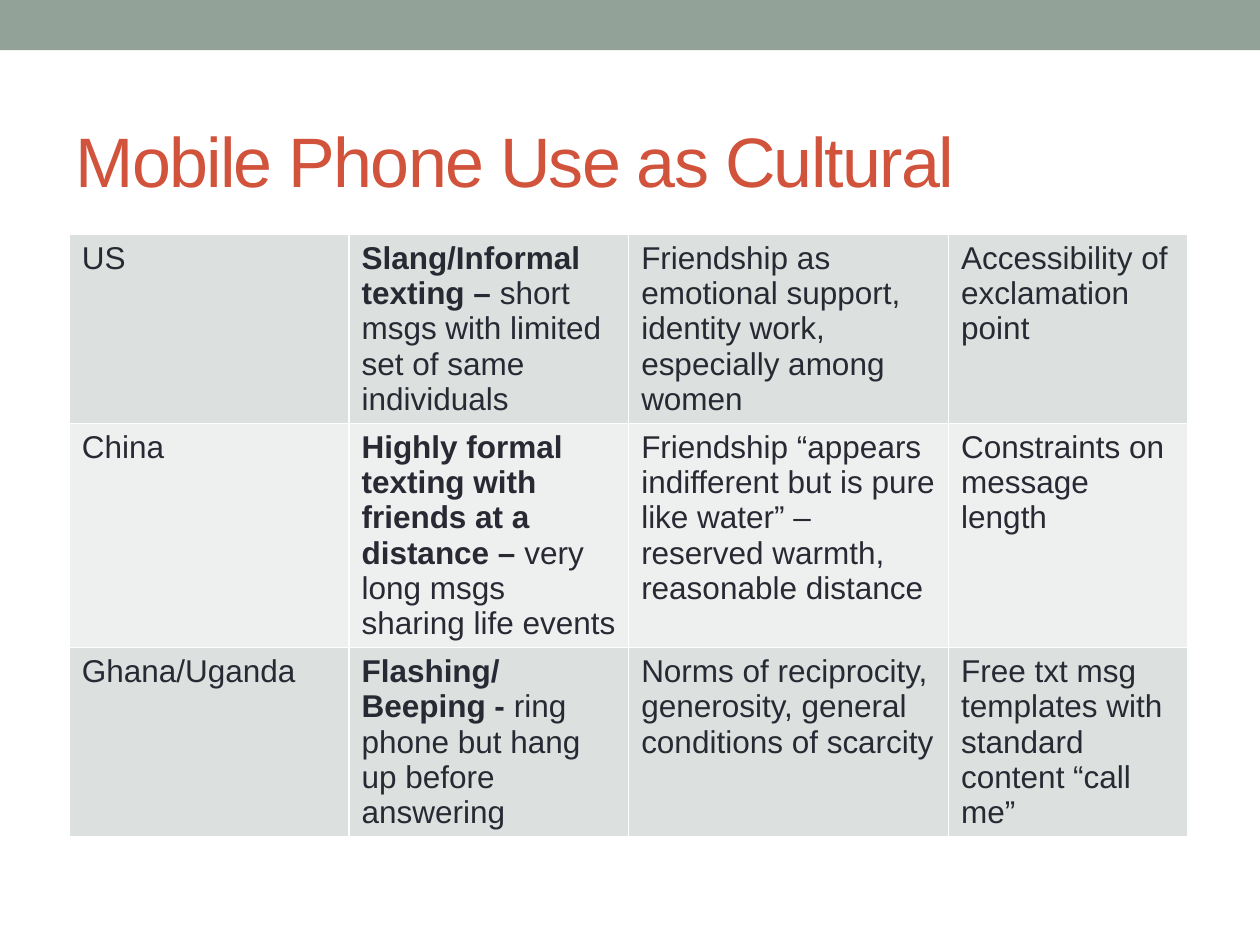
import dataclasses

import pptx
import pptx.dml.color
import pptx.enum.shapes
import pptx.enum.text
import pptx.oxml
import pptx.oxml.ns
import pptx.util


@dataclasses.dataclass(frozen=True)
class Theme:
    font: str = "Arial"
    title_size: int = 40
    body_size: int = 18
    title: str = "D2533C"
    text: str = "292934"
    banner: str = "93A299"
    bands: tuple = ("DCE0DE", "EEF0EF")
    border: str = "FFFFFF"


THEME = Theme()
SLIDE_WIDTH = pptx.util.Inches(10)
SLIDE_HEIGHT = pptx.util.Inches(7.5)

TITLE = "Mobile Phone Use as Cultural"
# Each row: place, (texting style, its detail), friendship norm, technical factor
PRACTICES = [
    ("US",
     ("Slang/Informal texting – ", "short msgs with limited set of same individuals"),
     "Friendship as emotional support, identity work, especially among women",
     "Accessibility of exclamation point"),
    ("China",
     ("Highly formal texting with friends at a distance – ",
      "very long msgs sharing life events"),
     "Friendship “appears indifferent but is pure like water” – "
     "reserved warmth, reasonable distance",
     "Constraints on message length"),
    ("Ghana/Uganda",
     ("Flashing/Beeping - ", "ring phone but hang up before answering"),
     "Norms of reciprocity, generosity, general conditions of scarcity",
     "Free txt msg templates with standard content “call me”"),
]
COLUMN_SHARES = (0.25, 0.25, 0.286, 0.214)
ROW_HEIGHT = 0.104  # share of the slide height; rows grow with their text


def share_box(left, top, width, height):
    """Turn shares of the slide's size into lengths."""
    return (int(left * SLIDE_WIDTH), int(top * SLIDE_HEIGHT),
            int(width * SLIDE_WIDTH), int(height * SLIDE_HEIGHT))


def rgb(code):
    return pptx.dml.color.RGBColor.from_string(code)


def add_text(paragraph, text, size=THEME.body_size, color=THEME.text,
             bold=False, spacing=None):
    run = paragraph.add_run()
    run.text = text
    run.font.name = THEME.font
    run.font.size = pptx.util.Pt(size)
    run.font.bold = bold
    run.font.color.rgb = rgb(color)
    if spacing is not None:
        run.font._element.set("spc", str(int(spacing * 100)))


def set_borders(cell, color, width=1):
    properties = cell._tc.get_or_add_tcPr()
    for position, side in enumerate(("lnL", "lnR", "lnT", "lnB")):
        properties.insert(position, pptx.oxml.parse_xml(
            f'<a:{side} {pptx.oxml.ns.nsdecls("a")} w="{pptx.util.Pt(width)}">'
            f'<a:solidFill><a:srgbClr val="{color}"/></a:solidFill></a:{side}>'))


def add_banner(slide, box):
    banner = slide.shapes.add_shape(
        pptx.enum.shapes.MSO_SHAPE.RECTANGLE, *box)
    banner.shadow.inherit = False
    banner.fill.solid()
    banner.fill.fore_color.rgb = rgb(THEME.banner)
    banner.line.fill.background()


def add_title(slide, box):
    title = slide.shapes.title
    title.left, title.top, title.width, title.height = box
    frame = title.text_frame
    frame.word_wrap = True
    frame.auto_size = pptx.enum.text.MSO_AUTO_SIZE.NONE
    frame.vertical_anchor = pptx.enum.text.MSO_ANCHOR.MIDDLE
    heading = frame.paragraphs[0]
    heading.alignment = pptx.enum.text.PP_ALIGN.LEFT
    add_text(heading, TITLE, size=THEME.title_size, color=THEME.title, spacing=-1)


def add_practices(slide, box):
    frame = slide.shapes.add_table(len(PRACTICES), len(COLUMN_SHARES), *box)
    table = frame.table
    table.first_row = table.horz_banding = False
    for column, share in zip(table.columns, COLUMN_SHARES):
        column.width = int(box[2] * share)
    for row_index, practice in enumerate(PRACTICES):
        table.rows[row_index].height = int(ROW_HEIGHT * SLIDE_HEIGHT)
        for column_index, content in enumerate(practice):
            cell = table.cell(row_index, column_index)
            cell.fill.solid()
            cell.fill.fore_color.rgb = rgb(THEME.bands[row_index % 2])
            set_borders(cell, THEME.border)
            paragraph = cell.text_frame.paragraphs[0]
            if isinstance(content, tuple):
                lead, detail = content
                add_text(paragraph, lead, bold=True)
                add_text(paragraph, detail)
            else:
                add_text(paragraph, content)
    frame.height = box[3]


def main():
    presentation = pptx.Presentation()
    presentation.slide_width = SLIDE_WIDTH
    presentation.slide_height = SLIDE_HEIGHT
    slide = presentation.slides.add_slide(
        presentation.slide_layouts.get_by_name("Title Only"))

    # Banner, comparison table and heading
    add_banner(slide, share_box(0, 0, 1, 0.053))
    add_practices(slide, share_box(0.055, 0.248, 0.888, 0.68))
    add_title(slide, share_box(0.05, 0.077, 0.9, 0.184))

    presentation.save("out.pptx")


if __name__ == "__main__":
    main()
